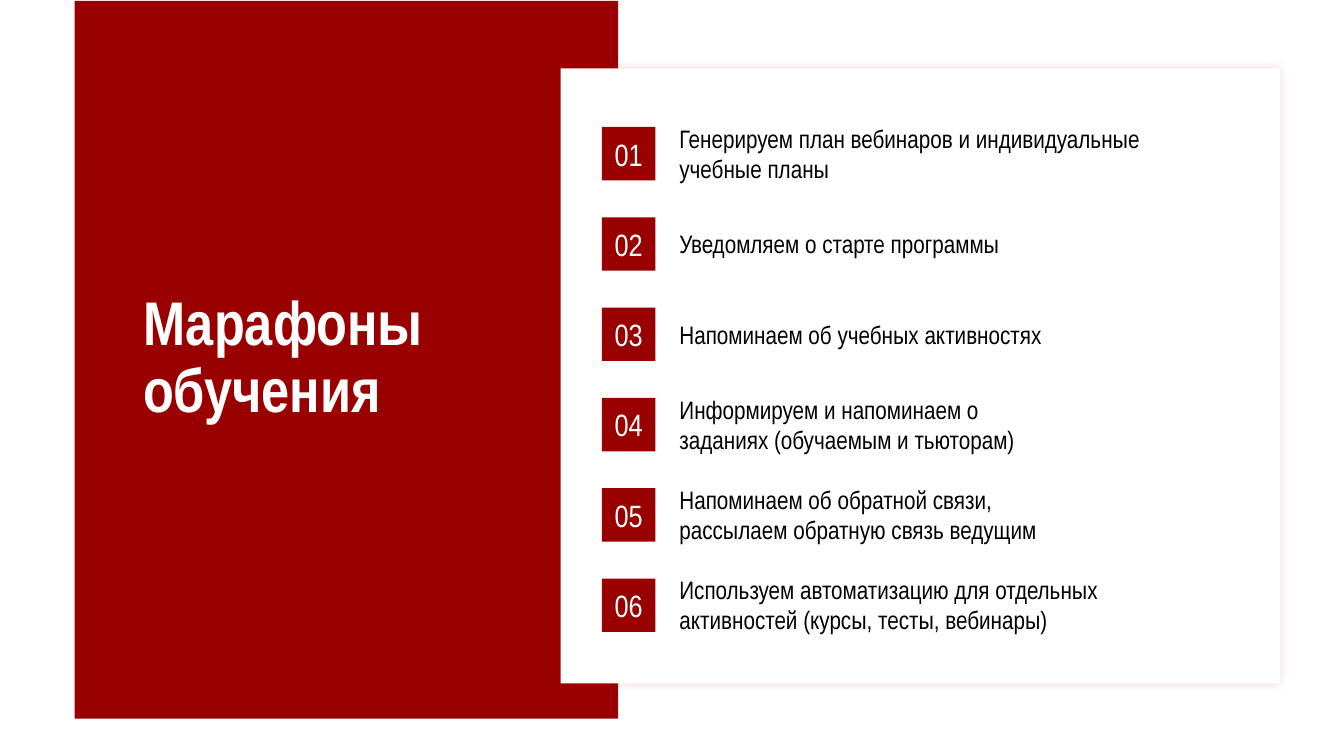
import pptx
import pptx.dml.color
import pptx.enum.shapes
import pptx.enum.text
import pptx.oxml
import pptx.oxml.ns
import pptx.util
from dataclasses import dataclass

Inches = pptx.util.Inches
ALIGN = pptx.enum.text.PP_ALIGN
ANCHOR = pptx.enum.text.MSO_ANCHOR
AUTOSIZE = pptx.enum.text.MSO_AUTO_SIZE

# Content: each step is its paragraphs and the width of its text box
TITLE = "Марафоны\vобучения"
STEPS = [
    (["Генерируем план вебинаров и индивидуальные учебные планы"], 5.09),
    (["Уведомляем о старте программы"], 5.65),
    (["Напоминаем об учебных активностях"], 6.24),
    (["Информируем и напоминаем о заданиях (обучаемым и тьюторам)"], 4.05),
    (["Напоминаем об обратной связи,", "рассылаем обратную связь ведущим"], 6.07),
    (["Используем автоматизацию для отдельных",
      "активностей (курсы, тесты, вебинары)"], 6.07),
]
ONE_LINE_STEPS = (1, 2)


@dataclass(frozen=True)
class Theme:
    font: str = "Arial Narrow"
    accent: str = "990000"
    light: str = "FFFFFF"
    dark: str = "000000"
    title_size: int = 44
    badge_size: int = 22
    step_size: int = 18


THEME = Theme()

# Layout in inches
PANEL = (0.74, 0.01, 5.39, 7.12)
CARD = (5.56, 0.68, 7.14, 6.1)
TITLE_AREA = (1.32, 2.49, 4.93, 2.14)
BADGE_LEFT, BADGE_SIDE = 5.97, 0.53
FIRST_TOP, LAST_TOP = 1.26, 5.74
STEP_LEFT = 6.64
ONE_LINE_HEIGHT, TWO_LINE_HEIGHT = 0.4, 0.71


def add_rectangle(page, area, color):
    box = page.shapes.add_shape(
        pptx.enum.shapes.MSO_SHAPE.RECTANGLE, *map(Inches, area))
    box.shadow.inherit = False
    box.fill.solid()
    box.fill.fore_color.rgb = pptx.dml.color.RGBColor.from_string(color)
    box.line.fill.background()
    return box


def write(box, lines, size, color, bold=False, align=ALIGN.LEFT, **frame_format):
    frame = box.text_frame
    for name, value in {"word_wrap": True, **frame_format}.items():
        setattr(frame, name, value)
    font_format = {"name": THEME.font, "size": pptx.util.Pt(size), "bold": bold}
    for index, line in enumerate(lines):
        para = frame.add_paragraph() if index else frame.paragraphs[0]
        para.text = line
        para.alignment = align
        for span in para.runs:
            for name, value in font_format.items():
                setattr(span.font, name, value)
            span.font.color.rgb = pptx.dml.color.RGBColor.from_string(color)


def add_glow_shadow(box, color, opacity, blur):
    effects = box.element.spPr.find(pptx.oxml.ns.qn("a:effectLst"))
    effects.append(pptx.oxml.parse_xml(
        f'<a:outerShdw {pptx.oxml.ns.nsdecls("a")} blurRad="{pptx.util.Pt(blur)}" '
        f'dist="0" dir="0" algn="ctr" rotWithShape="0"><a:srgbClr val="{color}">'
        f'<a:alpha val="{opacity * 1000}"/></a:srgbClr></a:outerShdw>'))


def main():
    deck = pptx.Presentation()
    deck.slide_width, deck.slide_height = Inches(13.33), Inches(7.5)
    page = deck.slides.add_slide(deck.slide_layouts[5])

    # Red panel and white card
    add_rectangle(page, PANEL, THEME.accent)
    card = add_rectangle(page, CARD, THEME.light)
    add_glow_shadow(card, THEME.accent, opacity=15, blur=7)

    # Title, brought in front of the panel
    title = page.shapes.title
    for name, value in zip(("left", "top", "width", "height"), TITLE_AREA):
        setattr(title, name, Inches(value))
    write(title, [TITLE], THEME.title_size, THEME.light, bold=True,
          vertical_anchor=ANCHOR.MIDDLE, auto_size=AUTOSIZE.NONE)
    title.text_frame.paragraphs[0].line_spacing = 0.9
    card.element.addnext(title.element)

    # Numbered steps, each text centred on its badge
    pitch = (LAST_TOP - FIRST_TOP) / (len(STEPS) - 1)
    for index, (lines, width) in enumerate(STEPS):
        top = FIRST_TOP + index * pitch
        badge = add_rectangle(
            page, (BADGE_LEFT, top, BADGE_SIDE, BADGE_SIDE), THEME.accent)
        write(badge, [f"{index + 1:02}"], THEME.badge_size, THEME.light,
              align=ALIGN.CENTER, vertical_anchor=ANCHOR.MIDDLE)

        height = ONE_LINE_HEIGHT if index in ONE_LINE_STEPS else TWO_LINE_HEIGHT
        step_top = top + (BADGE_SIDE - height) / 2
        step = page.shapes.add_textbox(
            *map(Inches, (STEP_LEFT, step_top, width, height)))
        write(step, lines, THEME.step_size, THEME.dark,
              auto_size=AUTOSIZE.SHAPE_TO_FIT_TEXT)

    deck.save("out.pptx")


if __name__ == "__main__":
    main()
